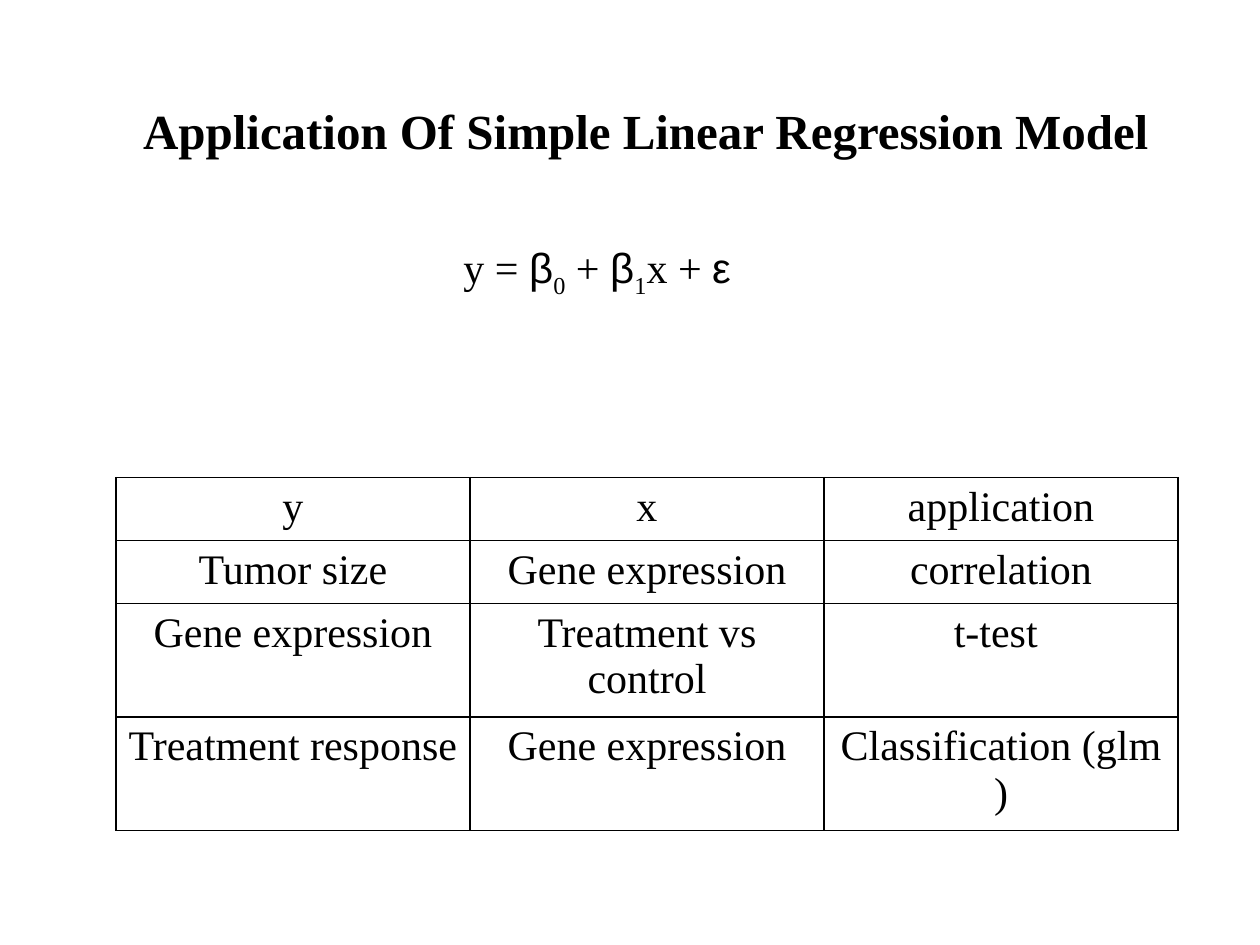
from typing import NamedTuple

from lxml import etree
from pptx import Presentation
from pptx.dml.color import RGBColor
from pptx.enum.text import MSO_AUTO_SIZE, PP_ALIGN
from pptx.oxml.ns import qn
from pptx.util import Inches, Pt

LEFT, CENTER = PP_ALIGN.LEFT, PP_ALIGN.CENTER
GROW = MSO_AUTO_SIZE.SHAPE_TO_FIT_TEXT
COLORS = {"ink": "000000"}
SERIF, SANS = "Times New Roman", "Arial"


class Term(NamedTuple):
    text: str
    face: str = SERIF
    sub: bool = False


class Label(NamedTuple):
    left: float
    top: float
    width: float
    height: float
    terms: list[Term]
    size: int = 24
    bold: bool = False
    align: PP_ALIGN = LEFT


LABELS = [
    Label(1, 0.75, 8.25, 0.57,
          [Term("Application Of Simple Linear Regression Model")],
          28, True, CENTER),
    Label(3.58, 1.87, 2.58, 0.51, [
        Term("y = "), Term("β", SANS), Term("0", sub=True), Term(" + "),
        Term("β", SANS), Term("1", sub=True), Term("x + "), Term("ε", SANS),
    ]),
]

ROWS = [
    ("y", "x", "application"),
    ("Tumor size", "Gene expression", "correlation"),
    ("Gene expression", "Treatment vs control", "t-test "),
    ("Treatment response", "Gene expression", "Classification (glm )"),
]
HEIGHTS = [0.5, 0.5, 0.9, 0.9]
COL = 2.81


def style(para, size: int, bold: bool, align: PP_ALIGN) -> None:
    para.alignment = align
    font = para.font
    font.name, font.size, font.bold = SERIF, Pt(size), bold
    font.color.rgb = RGBColor.from_string(COLORS["ink"])


def add_label(slide, label: Label) -> None:
    box = slide.shapes.add_textbox(*map(Inches, label[:4]))
    frame = box.text_frame
    frame.word_wrap = True
    frame.auto_size = GROW
    para = frame.paragraphs[0]
    style(para, label.size, label.bold, label.align)
    for term in label.terms:
        run = para.add_run()
        run.text = term.text
        if term.face != SERIF:
            run.font.name = term.face
        if term.sub:
            run.font._element.set("baseline", "-25000")


def add_border(cell) -> None:
    """Draw a thin line on all four sides of the cell."""
    props = cell._tc.get_or_add_tcPr()
    for i, side in enumerate(("lnL", "lnR", "lnT", "lnB")):
        line = etree.Element(qn(f"a:{side}"), w=str(Pt(1)))
        fill = etree.SubElement(line, qn("a:solidFill"))
        etree.SubElement(fill, qn("a:srgbClr"), val=COLORS["ink"])
        props.insert(i, line)


def add_grid(slide, left: float, top: float) -> None:
    cols = len(ROWS[0])
    table = slide.shapes.add_table(
        len(ROWS), cols, Inches(left), Inches(top),
        Inches(COL * cols), Inches(sum(HEIGHTS))).table
    table.first_row = table.horz_banding = False
    for col in table.columns:
        col.width = Inches(COL)
    for r, (words, height) in enumerate(zip(ROWS, HEIGHTS)):
        table.rows[r].height = Inches(height)
        for c, word in enumerate(words):
            cell = table.cell(r, c)
            cell.text = word
            style(cell.text_frame.paragraphs[0], 24, False, CENTER)
            cell.fill.background()
            add_border(cell)


def main() -> None:
    deck = Presentation()
    deck.slide_width, deck.slide_height = Inches(10), Inches(7.5)
    slide = deck.slides.add_slide(deck.slide_layouts[6])
    for label in LABELS:
        add_label(slide, label)
    add_grid(slide, 0.92, 3.79)
    deck.save("out.pptx")


if __name__ == "__main__":
    main()
